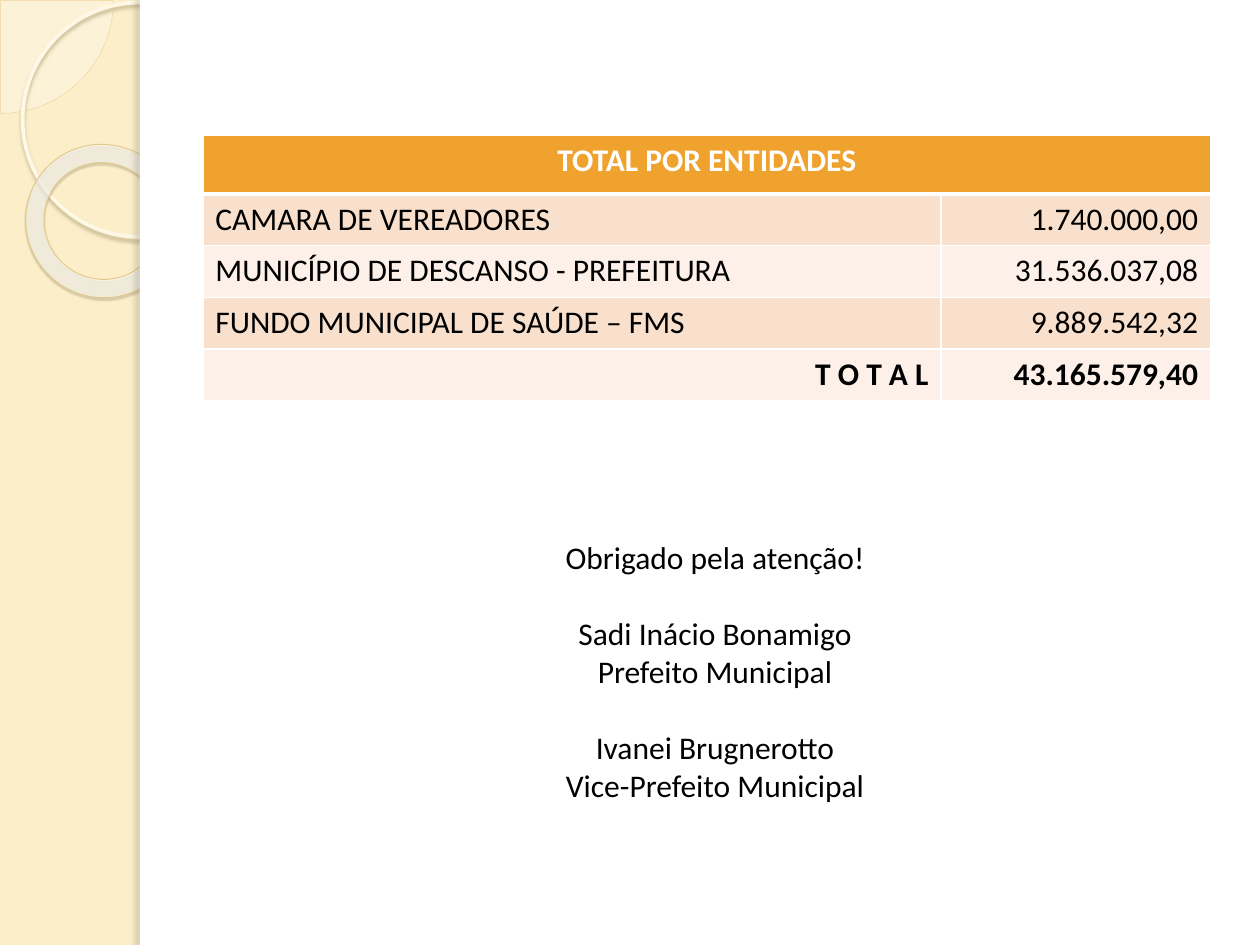
from lxml.etree import SubElement
from pptx import Presentation
from pptx.dml.color import RGBColor
from pptx.enum.shapes import MSO_SHAPE
from pptx.enum.text import PP_ALIGN
from pptx.oxml.ns import qn
from pptx.util import Inches, Pt

CREAM = RGBColor(0xFB, 0xEE, 0xC9)
IVORY = RGBColor(0xFF, 0xFC, 0xF6)
RING = RGBColor(0xFF, 0xF8, 0xE7)
DONUT = RGBColor(0xFF, 0xFE, 0xFC)
PIE_EDGE = RGBColor(0xEC, 0xD6, 0x97)
DONUT_EDGE = RGBColor(0xE1, 0xCA, 0x89)
RING_SHADOW = RGBColor(0xC3, 0xB5, 0x8B)
DONUT_SHADOW = RGBColor(0x65, 0x5C, 0x41)
BAND_SHADOW = RGBColor(0x7E, 0x77, 0x63)
ORANGE = RGBColor(0xF0, 0xA2, 0x2E)
PEACH = RGBColor(0xF9, 0xE0, 0xCD)
PALE_PEACH = RGBColor(0xFC, 0xF0, 0xE8)
WHITE = RGBColor(0xFF, 0xFF, 0xFF)
BLACK = RGBColor(0, 0, 0)

presentation = Presentation()
presentation.slide_width = Inches(10)
presentation.slide_height = Inches(7.5)
slide = presentation.slides.add_slide(presentation.slide_layouts[6])
slide.background.fill.solid()
slide.background.fill.fore_color.rgb = CREAM


def add_decoration(kind, box, fill=None, opacity=100, line=None, shadow=None):
    """line is (colour, points); shadow is (colour, opacity, blur, distance, degrees)."""
    shape = slide.shapes.add_shape(kind, *[Inches(value) for value in box])
    if fill is None:
        shape.fill.background()
    else:
        shape.fill.solid()
        shape.fill.fore_color.rgb = fill
        if opacity < 100:
            color = shape.fill._xPr.find(qn("a:solidFill"))[0]
            SubElement(color, qn("a:alpha"), val=str(opacity * 1000))
    if line is None:
        shape.line.fill.background()
    else:
        shape.line.color.rgb = line[0]
        shape.line.width = Pt(line[1])
    shape.shadow.inherit = False
    if shadow:
        color, strength, blur, distance, degrees = shadow
        effects = shape._element.spPr.find(qn("a:effectLst"))
        outer = SubElement(effects, qn("a:outerShdw"), blurRad=str(Pt(blur)),
                           dist=str(Pt(distance)), dir=str(degrees * 60000),
                           algn="ctr", rotWithShape="0")
        shadow_color = SubElement(outer, qn("a:srgbClr"), val=str(color))
        SubElement(shadow_color, qn("a:alpha"), val=str(strength * 1000))
    return shape


# Side band with circles, partly covered by the white panel
pie = add_decoration(MSO_SHAPE.PIE, (-0.89, -0.89, 1.79, 1.79), IVORY, 33, (PIE_EDGE, 0.25))
pie.adjustments[0] = 0
pie.adjustments[1] = 54
add_decoration(MSO_SHAPE.OVAL, (0.18, 0.02, 1.86, 1.86), line=(RING, 2.15),
               shadow=(RING_SHADOW, 85, 2, 2, 90))
donut = add_decoration(MSO_SHAPE.DONUT, (0.2, 1.15, 1.23, 1.21), DONUT, 58,
                       (DONUT_EDGE, 0.58), (DONUT_SHADOW, 35, 1, 1.2, 75))
donut.adjustments[0] = 0.12
donut.rotation = 38.6
add_decoration(MSO_SHAPE.RECTANGLE, (1.11, 0, 8.89, 7.5), WHITE)
add_decoration(MSO_SHAPE.RECTANGLE, (1.11, 0, 0.08, 7.5), WHITE,
               shadow=(BAND_SHADOW, 25, 3, 3, 180))

# Totals table
rows = [
    ("TOTAL POR ENTIDADES", ""),
    ("CAMARA DE VEREADORES", "1.740.000,00"),
    ("MUNICÍPIO DE DESCANSO - PREFEITURA", "31.536.037,08"),
    ("FUNDO MUNICIPAL DE SAÚDE – FMS", "9.889.542,32"),
    ("T O T A L", "43.165.579,40"),
]
last = len(rows) - 1
table = slide.shapes.add_table(len(rows), 2, Inches(1.61), Inches(1.07),
                               Inches(8), Inches(2.09)).table
table.columns[0].width = Inches(5.86)
table.columns[1].width = Inches(2.14)
for row_index, texts in enumerate(rows):
    table.rows[row_index].height = Inches(0.41 if row_index else 0.45)
    for column_index, text in enumerate(texts):
        cell = table.cell(row_index, column_index)
        properties = cell._tc.get_or_add_tcPr()
        for side in ("lnL", "lnR", "lnT", "lnB"):
            thick = (row_index, side) in ((0, "lnB"), (1, "lnT"))
            border = SubElement(properties, qn(f"a:{side}"), w=str(Pt(3 if thick else 1)))
            border_fill = SubElement(border, qn("a:solidFill"))
            SubElement(border_fill, qn("a:srgbClr"), val=str(WHITE))
        cell.fill.solid()
        if row_index == 0:
            cell.fill.fore_color.rgb = ORANGE
        else:
            cell.fill.fore_color.rgb = PEACH if row_index % 2 else PALE_PEACH
        cell.text = text
        paragraph = cell.text_frame.paragraphs[0]
        if row_index == 0:
            paragraph.alignment = PP_ALIGN.CENTER
        elif column_index == 1 or row_index == last:
            paragraph.alignment = PP_ALIGN.RIGHT
        paragraph.font.name = "Calibri"
        paragraph.font.size = Pt(18)
        paragraph.font.bold = row_index in (0, last)
        paragraph.font.color.rgb = BLACK if row_index else WHITE
table.cell(0, 0).merge(table.cell(0, 1))
table.rows[0].height = Inches(0.47)

# Closing words, one group per block
closing_groups = [
    ["Obrigado pela atenção!"],
    ["Sadi Inácio Bonamigo", "Prefeito Municipal"],
    ["Ivanei Brugnerotto", "Vice-Prefeito Municipal"],
]
closing = slide.shapes.add_textbox(Inches(3.43), Inches(4.22), Inches(4.49), Inches(2.3))
closing_frame = closing.text_frame
closing_frame.word_wrap = True
closing_frame.text = "\n".join(line for group in closing_groups for line in group)
group_starts = [group[0] for group in closing_groups[1:]]
for paragraph in closing_frame.paragraphs:
    paragraph.alignment = PP_ALIGN.CENTER
    paragraph.font.name = "Calibri"
    paragraph.font.size = Pt(18)
    paragraph.font.color.rgb = BLACK
    if paragraph.text in group_starts:
        paragraph.space_before = Pt(22)

presentation.save("out.pptx")
